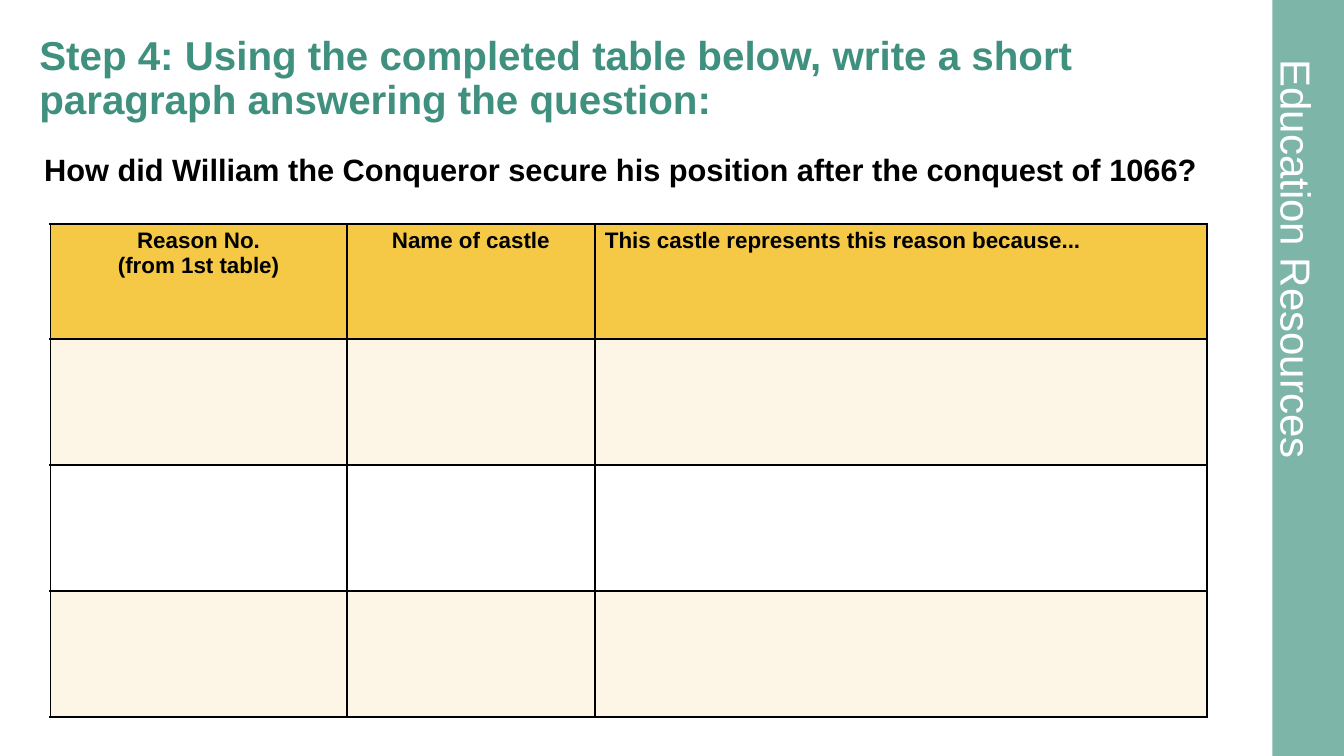
from dataclasses import dataclass

from lxml import etree
from pptx import Presentation
from pptx.dml.color import RGBColor
from pptx.enum.shapes import MSO_SHAPE
from pptx.enum.text import MSO_ANCHOR, PP_ALIGN
from pptx.oxml.ns import qn
from pptx.util import Inches, Pt

RECTANGLE = MSO_SHAPE.RECTANGLE
LEFT, CENTER = PP_ALIGN.LEFT, PP_ALIGN.CENTER
TOP, MIDDLE = MSO_ANCHOR.TOP, MSO_ANCHOR.MIDDLE
BLANK_LAYOUT = 6


@dataclass(frozen=True)
class Theme:
    font: str = "Arial"
    sidebar: str = "7EB5A9"
    title: str = "40907F"
    text: str = "000000"
    white: str = "FFFFFF"
    header: str = "F5C946"
    band: str = "FDF5E5"
    border: str = "000000"
    border_width: float = 1.5
    sidebar_size: float = 30
    title_size: float = 28.8
    question_size: float = 22
    header_size: float = 16


THEME = Theme()

COLUMN_WIDTHS = (2.94, 2.46, 6.07)
ROW_HEIGHTS = (1.14, 1.25, 1.25, 1.25)
HEADERS = (
    (("Reason No.", "(from 1st table)"), CENTER),
    (("Name of castle",), CENTER),
    (("This castle represents this reason because...",), LEFT),
)


def add_paragraph_text(paragraph, text, size, color, bold=True, align=LEFT):
    paragraph.alignment = align
    run = paragraph.add_run()
    run.text = text
    run.font.name = THEME.font
    run.font.size = Pt(size)
    run.font.bold = bold
    run.font.color.rgb = RGBColor.from_string(color)


def add_text(slide, box, text, size, color, margins=(0.1, 0.05, 0.1, 0.05),
             anchor=TOP, spacing=None, bold=True, align=LEFT):
    shape = slide.shapes.add_textbox(*map(Inches, box))
    frame = shape.text_frame
    frame.word_wrap = True
    frame.vertical_anchor = anchor
    (frame.margin_left, frame.margin_top,
     frame.margin_right, frame.margin_bottom) = map(Inches, margins)
    paragraph = frame.paragraphs[0]
    paragraph.line_spacing = spacing
    add_paragraph_text(paragraph, text, size, color, bold, align)
    return shape


def add_sidebar(slide):
    bar = slide.shapes.add_shape(
        RECTANGLE, Inches(12.62), 0, Inches(0.71), Inches(7.5))
    bar.shadow.inherit = False
    bar.fill.solid()
    bar.fill.fore_color.rgb = RGBColor.from_string(THEME.sidebar)
    bar.line.fill.background()
    label = add_text(slide, (11.07, 2.21, 4.01, 0.72), "Education Resources",
                     THEME.sidebar_size, THEME.white, margins=(0, 0, 0, 0),
                     spacing=Pt(58.8), bold=False, align=CENTER)
    label.rotation = 90


def set_borders(cell):
    properties = cell._tc.get_or_add_tcPr()
    for side in ("a:lnL", "a:lnR", "a:lnT", "a:lnB"):
        line = etree.SubElement(properties, qn(side),
                                w=str(Pt(THEME.border_width)))
        fill = etree.SubElement(line, qn("a:solidFill"))
        etree.SubElement(fill, qn("a:srgbClr"), val=THEME.border)


def style_cell(cell, row):
    set_borders(cell)
    if row == 0 or row % 2:
        color = THEME.band if row else THEME.header
        cell.fill.solid()
        cell.fill.fore_color.rgb = RGBColor.from_string(color)
    else:
        cell.fill.background()


def add_castle_table(slide):
    table = slide.shapes.add_table(
        len(ROW_HEIGHTS), len(COLUMN_WIDTHS), Inches(0.5), Inches(2.22),
        Inches(sum(COLUMN_WIDTHS)), Inches(sum(ROW_HEIGHTS))).table
    for column, width in zip(table.columns, COLUMN_WIDTHS):
        column.width = Inches(width)
    for row_index, (row, height) in enumerate(zip(table.rows, ROW_HEIGHTS)):
        row.height = Inches(height)
        for cell in row.cells:
            style_cell(cell, row_index)

    # Header wording
    for cell, (lines, align) in zip(table.rows[0].cells, HEADERS):
        frame = cell.text_frame
        for index, text in enumerate(lines):
            paragraph = frame.add_paragraph() if index else frame.paragraphs[0]
            add_paragraph_text(paragraph, text, THEME.header_size, THEME.text,
                               align=align)


def main():
    presentation = Presentation()
    presentation.slide_width = Inches(13.33)
    presentation.slide_height = Inches(7.5)
    slide = presentation.slides.add_slide(
        presentation.slide_layouts[BLANK_LAYOUT])

    # Sidebar with its vertical label
    add_sidebar(slide)

    # Task and question
    add_text(slide, (0.39, 0.4, 12.03, 0.78),
             "Step 4: Using the completed table below, write a short "
             "paragraph answering the question:",
             THEME.title_size, THEME.title, margins=(0, 0.05, 0.1, 0.05),
             anchor=MIDDLE, spacing=0.9)
    add_text(slide, (0.34, 1.45, 11.79, 0.77),
             "How did William the Conqueror secure his position after the "
             "conquest of 1066?",
             THEME.question_size, THEME.text)

    # Table to complete
    add_castle_table(slide)

    presentation.save("out.pptx")


if __name__ == "__main__":
    main()
